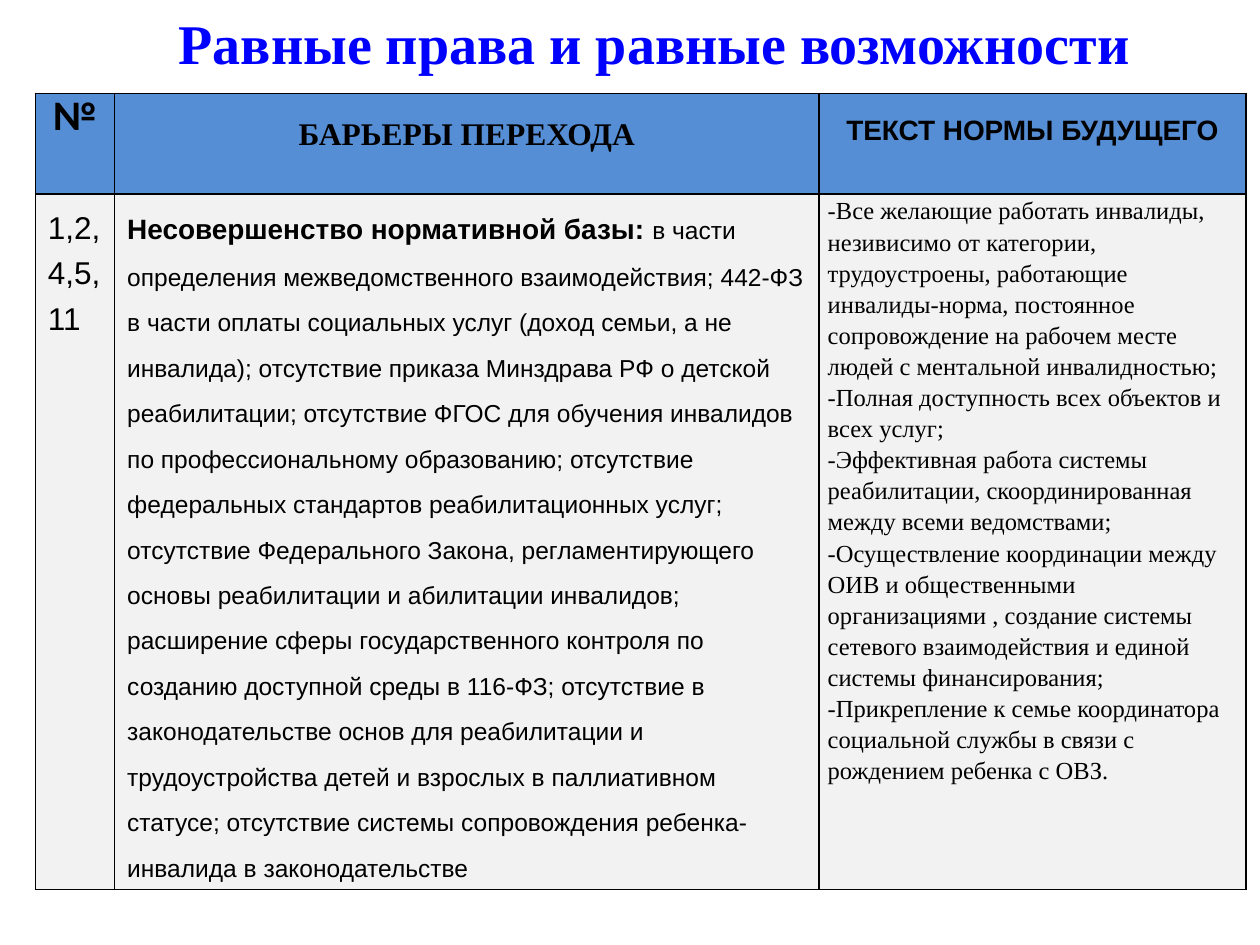
from dataclasses import dataclass

from lxml import etree
from pptx import Presentation
from pptx.dml.color import RGBColor
from pptx.enum.text import MSO_ANCHOR, PP_ALIGN
from pptx.oxml.ns import qn
from pptx.util import Inches, Pt

CENTER, LEFT = PP_ALIGN.CENTER, PP_ALIGN.LEFT
TOP = MSO_ANCHOR.TOP
TITLE_ONLY = 5


@dataclass(frozen=True)
class Theme:
    title: str = "0000FF"
    ink: str = "000000"
    header: str = "558ED5"
    body: str = "F2F2F2"
    serif: str = "Times New Roman"
    sans: str = "Arial"
    numeral: str = "Calibri"
    title_size: int = 32
    number_size: int = 24
    large: int = 18
    medium: int = 16
    small: int = 14


THEME = Theme()

COLUMN_WIDTHS = (0.63, 5.59, 3.39)
ROW_HEIGHTS = (0.8, 5.52)

BARRIERS = (
    "в части определения межведомственного взаимодействия; 442-ФЗ в части оплаты "
    "социальных услуг (доход семьи, а не инвалида); отсутствие приказа Минздрава РФ "
    "о детской реабилитации; отсутствие ФГОС для обучения инвалидов по "
    "профессиональному образованию; отсутствие федеральных стандартов "
    "реабилитационных услуг; отсутствие Федерального Закона, регламентирующего "
    "основы реабилитации и абилитации инвалидов; расширение сферы государственного "
    "контроля по созданию доступной среды в 116-ФЗ; отсутствие в законодательстве "
    "основ для реабилитации и трудоустройства детей и взрослых в паллиативном "
    "статусе; отсутствие системы сопровождения ребенка-инвалида в законодательстве"
)

FUTURE_NORMS = (
    "-Все желающие работать инвалиды, незивисимо от категории, трудоустроены, "
    "работающие инвалиды-норма, постоянное",
    "сопровождение на рабочем месте людей с ментальной инвалидностью;",
    "-Полная доступность всех объектов и всех услуг;",
    "-Эффективная работа системы реабилитации, скоординированная между всеми "
    "ведомствами;",
    "-Осуществление координации между ОИВ и общественными организациями , создание "
    "системы сетевого взаимодействия и единой системы финансирования;",
    "-Прикрепление к семье координатора социальной службы в связи с рождением "
    "ребенка с ОВЗ.",
)


def set_all(target, values):
    for name, value in values.items():
        setattr(target, name, value)


def add_run(paragraph, text, size, font, bold=False, color=THEME.ink):
    run = paragraph.add_run()
    run.text = text
    set_all(run.font, {"size": Pt(size), "name": font, "bold": bold})
    run.font.color.rgb = RGBColor.from_string(color)


def write_paragraphs(frame, paragraphs, align, spacing):
    """Each paragraph is a list of runs: (text, size, font, bold)."""
    for index, runs in enumerate(paragraphs):
        paragraph = frame.add_paragraph() if index else frame.paragraphs[0]
        set_all(paragraph, {"alignment": align, "line_spacing": spacing})
        for run in runs:
            add_run(paragraph, *run)


def add_borders(cell):
    """Draw a thin line on all four sides, ahead of the cell's fill."""
    properties = cell._tc.get_or_add_tcPr()
    for position, side in enumerate(("a:lnL", "a:lnR", "a:lnT", "a:lnB")):
        line = etree.Element(qn(side), w=str(Pt(1)))
        fill = etree.SubElement(line, qn("a:solidFill"))
        etree.SubElement(fill, qn("a:srgbClr"), val=THEME.ink)
        properties.insert(position, line)


def fill_cell(cell, fill, paragraphs, align, spacing, margins=(0.1, 0.05)):
    side, edge = map(Inches, margins)
    set_all(cell, {"margin_left": side, "margin_right": side,
                   "margin_top": edge, "margin_bottom": edge,
                   "vertical_anchor": TOP})
    cell.fill.solid()
    cell.fill.fore_color.rgb = RGBColor.from_string(fill)
    write_paragraphs(cell.text_frame, paragraphs, align, spacing)
    add_borders(cell)


def add_title(slide):
    title = slide.shapes.title
    set_all(title, {"left": Inches(1.18), "top": Inches(0.02),
                    "width": Inches(8.03), "height": Inches(0.57)})
    set_all(title.text_frame, {"word_wrap": True, "vertical_anchor": TOP})
    paragraph = title.text_frame.paragraphs[0]
    paragraph.alignment = CENTER
    add_run(paragraph, "Равные права и равные возможности",
            THEME.title_size, THEME.serif, True, THEME.title)


def add_barrier_table(slide):
    table = slide.shapes.add_table(
        len(ROW_HEIGHTS), len(COLUMN_WIDTHS), Inches(0.28), Inches(0.74),
        Inches(sum(COLUMN_WIDTHS)), Inches(sum(ROW_HEIGHTS))).table
    for column, width in zip(table.columns, COLUMN_WIDTHS):
        column.width = Inches(width)
    for row, height in zip(table.rows, ROW_HEIGHTS):
        row.height = Inches(height)

    # Header row
    headers = (
        ("№", THEME.number_size, THEME.numeral, Pt(24)),
        ("БАРЬЕРЫ ПЕРЕХОДА", THEME.large, THEME.serif, 1.5),
        ("ТЕКСТ НОРМЫ БУДУЩЕГО", THEME.medium, THEME.sans, 1.5),
    )
    for column, (text, size, font, spacing) in enumerate(headers):
        fill_cell(table.cell(0, column), THEME.header,
                  [[(text, size, font, True)]], CENTER, spacing)

    # Body row: numbers, barriers, future norms
    numbers = [[("1,2,4,5,11", THEME.large, THEME.sans)]]
    barriers = [[("Несовершенство нормативной базы: ", THEME.medium, THEME.sans, True),
                 (BARRIERS, THEME.small, THEME.sans)]]
    norms = [[(text, THEME.small, THEME.serif)] for text in FUTURE_NORMS]
    fill_cell(table.cell(1, 0), THEME.body, numbers, LEFT, Pt(26))
    fill_cell(table.cell(1, 1), THEME.body, barriers, LEFT, Pt(26))
    fill_cell(table.cell(1, 2), THEME.body, norms, LEFT, 1.15, margins=(0.07, 0))


def main():
    presentation = Presentation()
    set_all(presentation, {"slide_width": Inches(10), "slide_height": Inches(7.5)})
    slide = presentation.slides.add_slide(presentation.slide_layouts[TITLE_ONLY])
    add_barrier_table(slide)
    add_title(slide)
    presentation.save("out.pptx")


if __name__ == "__main__":
    main()
